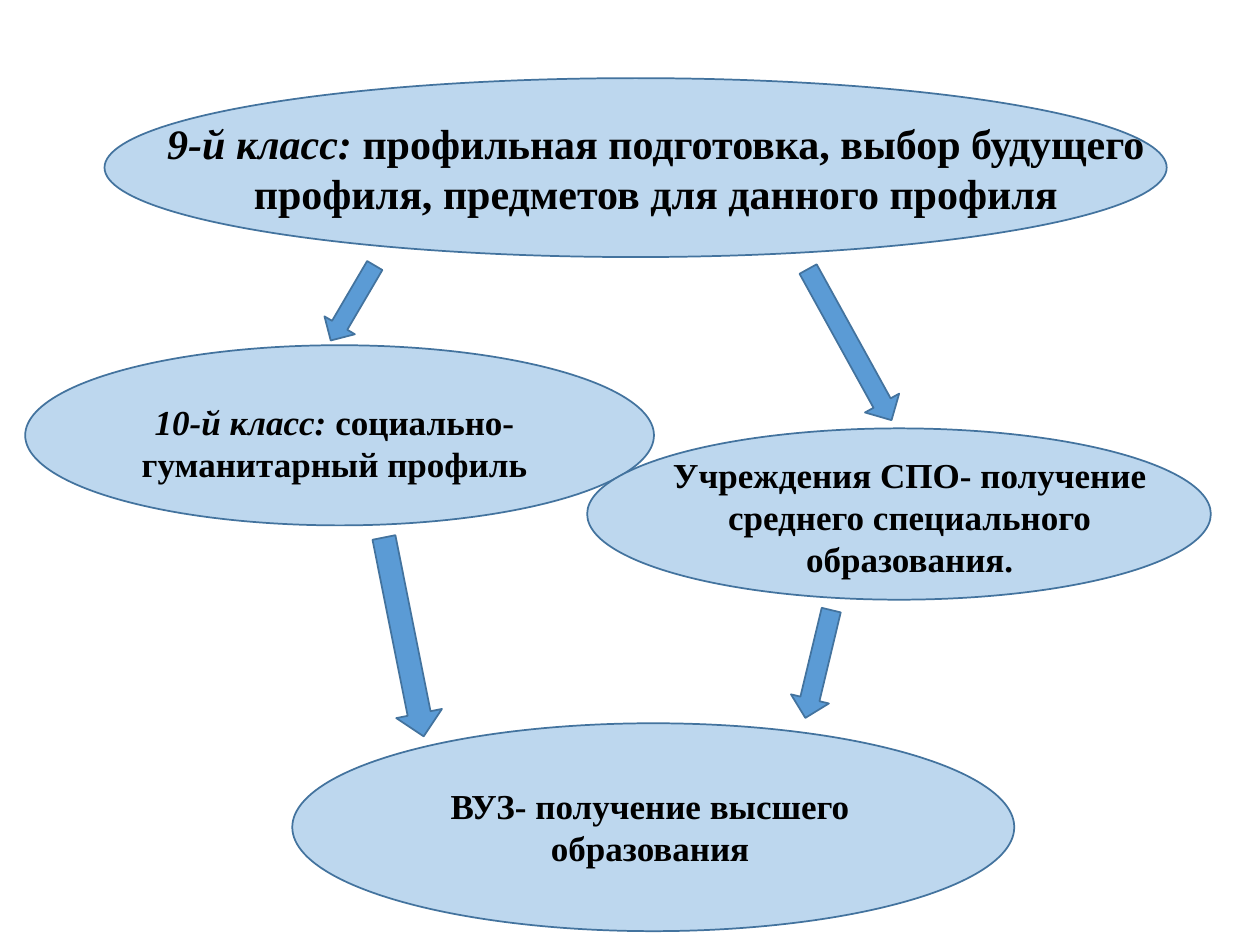
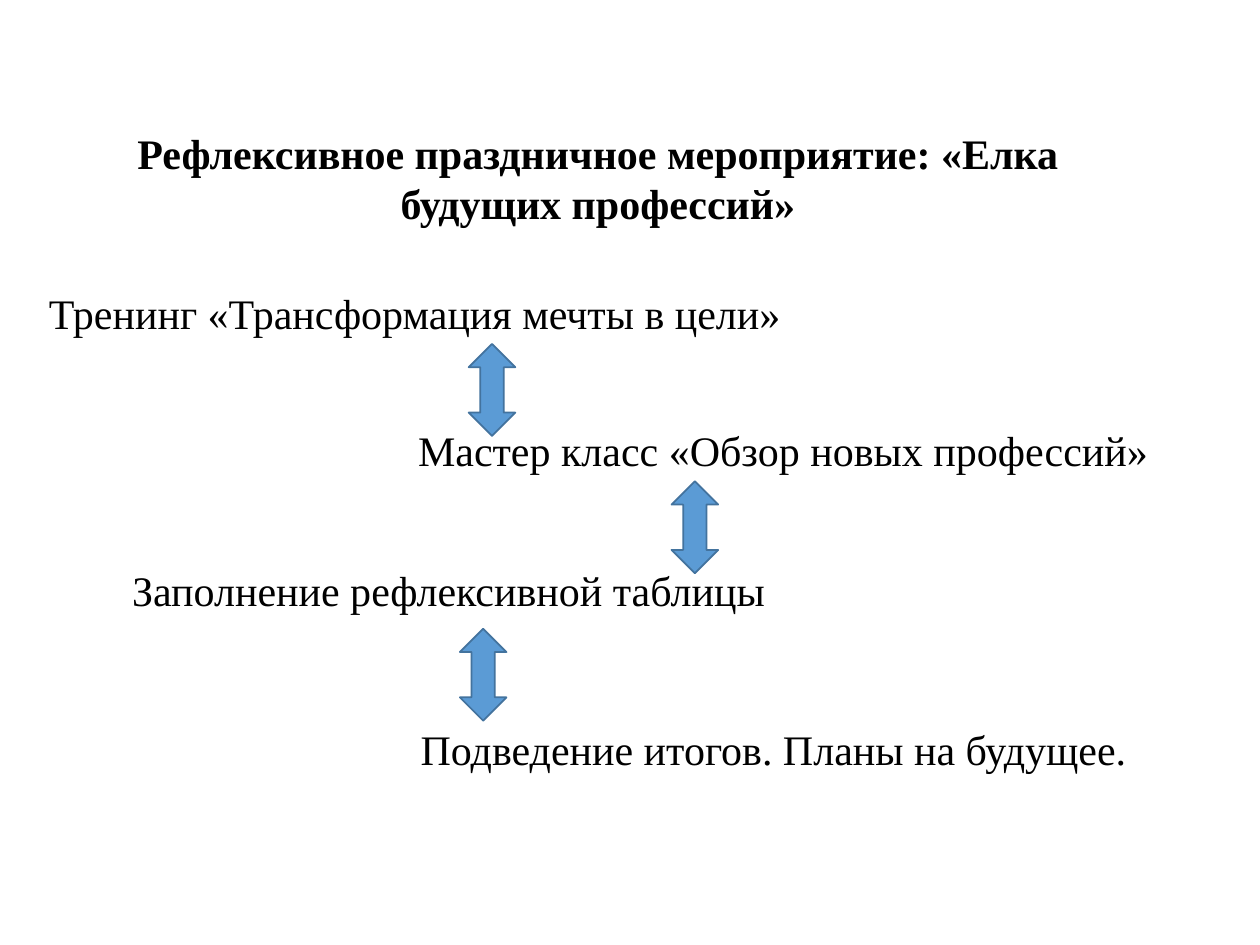
import pptx
import pptx.util
import pptx.dml.color
import pptx.enum.shapes
import pptx.enum.text

Inches = pptx.util.Inches
Pt = pptx.util.Pt
RGBColor = pptx.dml.color.RGBColor
SHAPE = pptx.enum.shapes.MSO_SHAPE
ALIGN = pptx.enum.text.PP_ALIGN

FONT = "Times New Roman"
TEXT_COLOR = RGBColor(0x00, 0x00, 0x00)
STAGE_FILL = RGBColor(0xBD, 0xD7, 0xEE)
ARROW_FILL = RGBColor(0x5B, 0x9B, 0xD5)
OUTLINE = RGBColor(0x43, 0x73, 0x9E)
TITLE_ONLY, BLANK = 5, 6


def add_figure(slide, preset, box, fill, rotation=0):
    figure = slide.shapes.add_shape(preset, *map(Inches, box))
    figure.shadow.inherit = False
    figure.fill.solid()
    figure.fill.fore_color.rgb = fill
    figure.line.color.rgb = OUTLINE
    figure.line.width = Pt(1)
    figure.rotation = rotation


def format_run(run, size, bold, italic=False):
    run.font.name = FONT
    run.font.size = Pt(size)
    run.font.bold = bold
    run.font.italic = italic
    run.font.color.rgb = TEXT_COLOR


def fill_caption(caption, text, size, bold=False, align=ALIGN.LEFT, wrap=True, lead=""):
    frame = caption.text_frame
    frame.word_wrap = wrap
    frame.auto_size = pptx.enum.text.MSO_AUTO_SIZE.SHAPE_TO_FIT_TEXT
    frame.vertical_anchor = pptx.enum.text.MSO_ANCHOR.TOP
    paragraph = frame.paragraphs[0]
    paragraph.alignment = align
    if lead:
        lead_run = paragraph.add_run()
        lead_run.text = lead
        format_run(lead_run, size, bold, italic=True)
    text_run = paragraph.add_run()
    text_run.text = text
    format_run(text_run, size, bold)


def add_caption(slide, box, text, size, **style):
    caption = slide.shapes.add_textbox(*map(Inches, box))
    fill_caption(caption, text, size, **style)


def add_title(slide, box, text):
    title = slide.shapes.title
    title.left, title.top, title.width, title.height = map(Inches, box)
    fill_caption(title, text, 24, bold=True, align=ALIGN.CENTER)


def build_pathways(prs):
    slide = prs.slides.add_slide(prs.slide_layouts[BLANK])
    stages = [
        ((0.83, 0.62, 8.43, 1.42), (1.19, 0.88, 8.03, 0.91), 24, "9-й класс: ",
         "профильная подготовка, выбор будущего профиля, предметов для данного профиля"),
        ((0.2, 2.74, 4.99, 1.43), (0.88, 3.13, 3.55, 0.77), 20, "10-й класс: ",
         "социально-гуманитарный профиль"),
        ((4.66, 3.4, 4.95, 1.36), (5.19, 3.55, 4.06, 1.11), 20, "",
         "Учреждения СПО- получение среднего специального образования."),
        ((2.32, 5.74, 5.73, 1.65), (3.43, 6.18, 3.46, 0.77), 20, "",
         "ВУЗ- получение высшего образования"),
    ]
    for oval, caption, size, lead, text in stages:
        add_figure(slide, SHAPE.OVAL, oval, STAGE_FILL)
        add_caption(slide, caption, text, size, bold=True, align=ALIGN.CENTER, lead=lead)

    transitions = [
        ((2.66, 2.06, 0.28, 0.69), 30.4),
        ((6.59, 2.05, 0.31, 1.37), 331.1),
        ((3.02, 4.25, 0.37, 1.61), 348.7),
        ((6.34, 4.83, 0.31, 0.88), 13.5),
    ]
    for box, rotation in transitions:
        add_figure(slide, SHAPE.DOWN_ARROW, box, ARROW_FILL, rotation)


def build_event(prs):
    slide = prs.slides.add_slide(prs.slide_layouts[TITLE_ONLY])
    add_title(slide, (0.95, 0.96, 7.59, 0.91),
              "Рефлексивное праздничное мероприятие: «Елка будущих профессий»")
    activities = [
        (0.29, 2.23, 6.07, "Тренинг «Трансформация мечты в цели»"),
        (3.22, 3.32, 6, "Мастер класс «Обзор новых профессий»"),
        (0.95, 4.43, 5.28, "Заполнение рефлексивной таблицы"),
        (3.24, 5.69, 5.86, "Подведение итогов. Планы на будущее."),
    ]
    for left, top, width, text in activities:
        add_caption(slide, (left, top, width, 0.5), text, 24, wrap=False)
    for left, top in [(3.72, 2.73), (5.33, 3.82), (3.65, 4.99)]:
        add_figure(slide, SHAPE.UP_DOWN_ARROW, (left, top, 0.37, 0.73), ARROW_FILL)


def main():
    prs = pptx.Presentation()
    prs.slide_width = Inches(10)
    prs.slide_height = Inches(7.5)
    build_pathways(prs)
    build_event(prs)
    prs.save("out.pptx")


if __name__ == "__main__":
    main()
